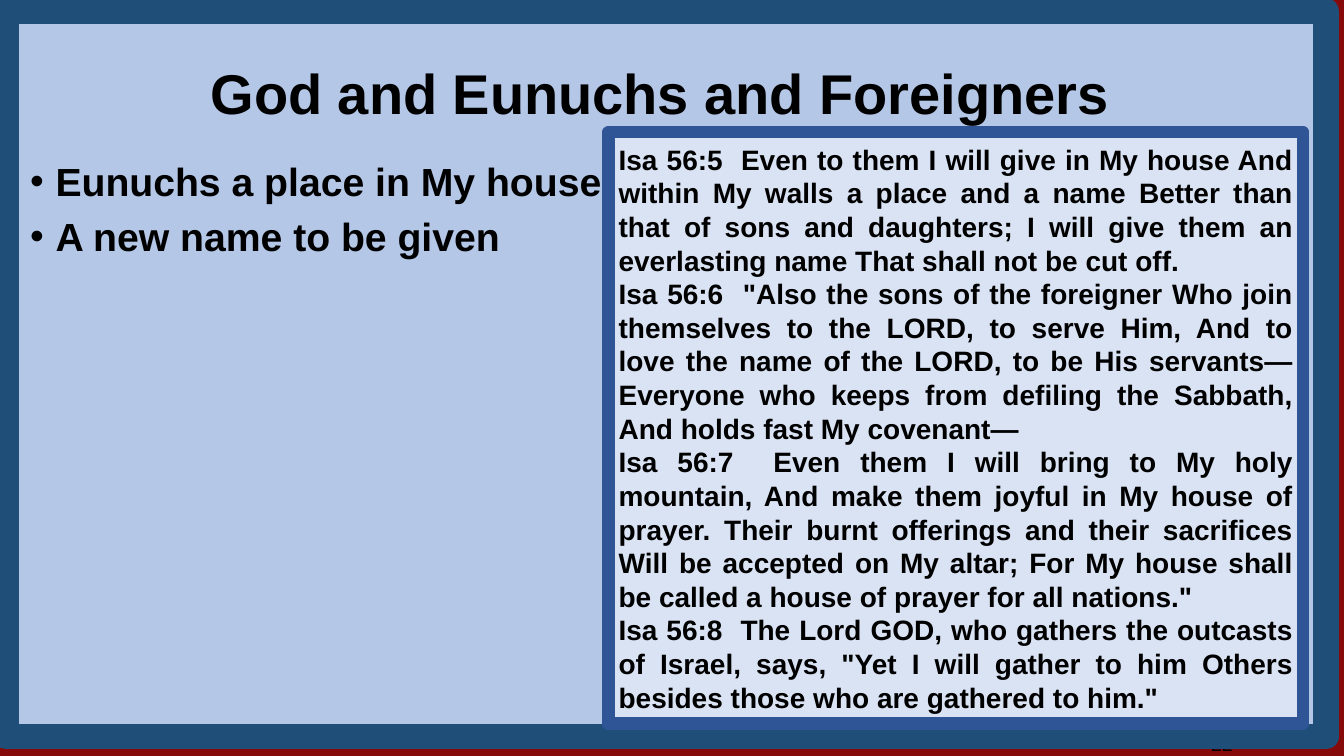
"""Build the slide "God and Eunuchs and Foreigners"."""
import pptx
import pptx.dml.color
import pptx.enum.shapes
import pptx.enum.text
import pptx.oxml
import pptx.oxml.ns
import pptx.util
from pptx.util import Cm

ALIGN = pptx.enum.text.PP_ALIGN
ANCHOR = pptx.enum.text.MSO_ANCHOR

COLOURS = {
    "background": "860A0A",
    "panel": "B4C7E7",
    "panel border": "1F4E79",
    "scripture": "DAE3F3",
    "scripture border": "2F5597",
    "text": "000000",
}

VERSES = [
    "Isa 56:5  Even to them I will give in My house And within My walls a place and a name "
    "Better than that of sons and daughters; I will give them an everlasting name That shall "
    "not be cut off.",
    "Isa 56:6  \"Also the sons of the foreigner Who join themselves to the LORD, to serve Him, "
    "And to love the name of the LORD, to be His servants—Everyone who keeps from defiling "
    "the Sabbath, And holds fast My covenant—",
    "Isa 56:7  Even them I will bring to My holy mountain, And make them joyful in My house of "
    "prayer. Their burnt offerings and their sacrifices Will be accepted on My altar; For My "
    "house shall be called a house of prayer for all nations.\"",
    "Isa 56:8  The Lord GOD, who gathers the outcasts of Israel, says, \"Yet I will gather to "
    "him Others besides those who are gathered to him.\"",
]
POINTS = ["Eunuchs a place in My house", "A new name to be given"]


def colour(name):
    return pptx.dml.color.RGBColor.from_string(COLOURS[name])


def add_bullet(para):
    properties = para._p.get_or_add_pPr()
    properties.set("marL", str(Cm(0.64)))
    properties.set("indent", str(-Cm(0.64)))
    namespace = pptx.oxml.ns.nsdecls("a")
    properties.append(pptx.oxml.parse_xml(
        f'<a:buClr {namespace}><a:srgbClr val="{COLOURS["text"]}"/></a:buClr>'))
    properties.append(pptx.oxml.parse_xml(f'<a:buFont {namespace} typeface="Arial"/>'))
    properties.append(pptx.oxml.parse_xml(f'<a:buChar {namespace} char="•"/>'))


def write(box, lines, size, align, anchor=ANCHOR.TOP, bold=True, after=0, bullets=False):
    frame = box.text_frame
    frame.word_wrap = True
    frame.vertical_anchor = anchor
    frame.text = "\n".join(lines)
    for para in frame.paragraphs:
        para.alignment = align
        para.line_spacing = pptx.util.Pt(1.2 * size)
        para.space_after = pptx.util.Pt(after)
        if bullets:
            add_bullet(para)
        for span in para.runs:
            span.font.name = "Arial"
            span.font.size = pptx.util.Pt(size)
            span.font.bold = bold
            span.font.color.rgb = colour("text")


def add_text(page, place, lines, size, align, **style):
    write(page.shapes.add_textbox(*place), lines, size, align, **style)


def add_panel(page, place, name, border):
    panel = page.shapes.add_shape(pptx.enum.shapes.MSO_SHAPE.RECTANGLE, *place)
    panel.shadow.inherit = False
    panel.fill.solid()
    panel.fill.fore_color.rgb = colour(name)
    panel.line.color.rgb = colour(f"{name} border")
    panel.line.width = pptx.util.Pt(border)
    return panel


def main():
    deck = pptx.Presentation()
    deck.slide_width, deck.slide_height = Cm(33.87), Cm(19.05)
    page = deck.slides.add_slide(deck.slide_layouts[6])
    page.background.fill.solid()
    page.background.fill.fore_color.rgb = colour("background")

    add_text(page, (Cm(23.7), Cm(18.24), Cm(7.62), Cm(1.02)), ["22"], 14, ALIGN.RIGHT,
             anchor=ANCHOR.MIDDLE, bold=False)
    add_panel(page, (Cm(0.15), Cm(0.28), Cm(33.27), Cm(18.29)), "panel", 18)
    scripture = add_panel(page, (Cm(15.34), Cm(3.33), Cm(17.5), Cm(14.91)), "scripture", 9)
    write(scripture, VERSES, 20, ALIGN.JUSTIFY, anchor=ANCHOR.MIDDLE)
    add_text(page, (Cm(0.51), Cm(3.84), Cm(15.44), Cm(2.87)), POINTS, 28, ALIGN.LEFT,
             after=6, bullets=True)
    add_text(page, (Cm(0.43), Cm(1.35), Cm(32.39), Cm(1.96)),
             ["God and Eunuchs and Foreigners"], 40, ALIGN.CENTER, after=5)
    deck.save("out.pptx")


if __name__ == "__main__":
    main()
